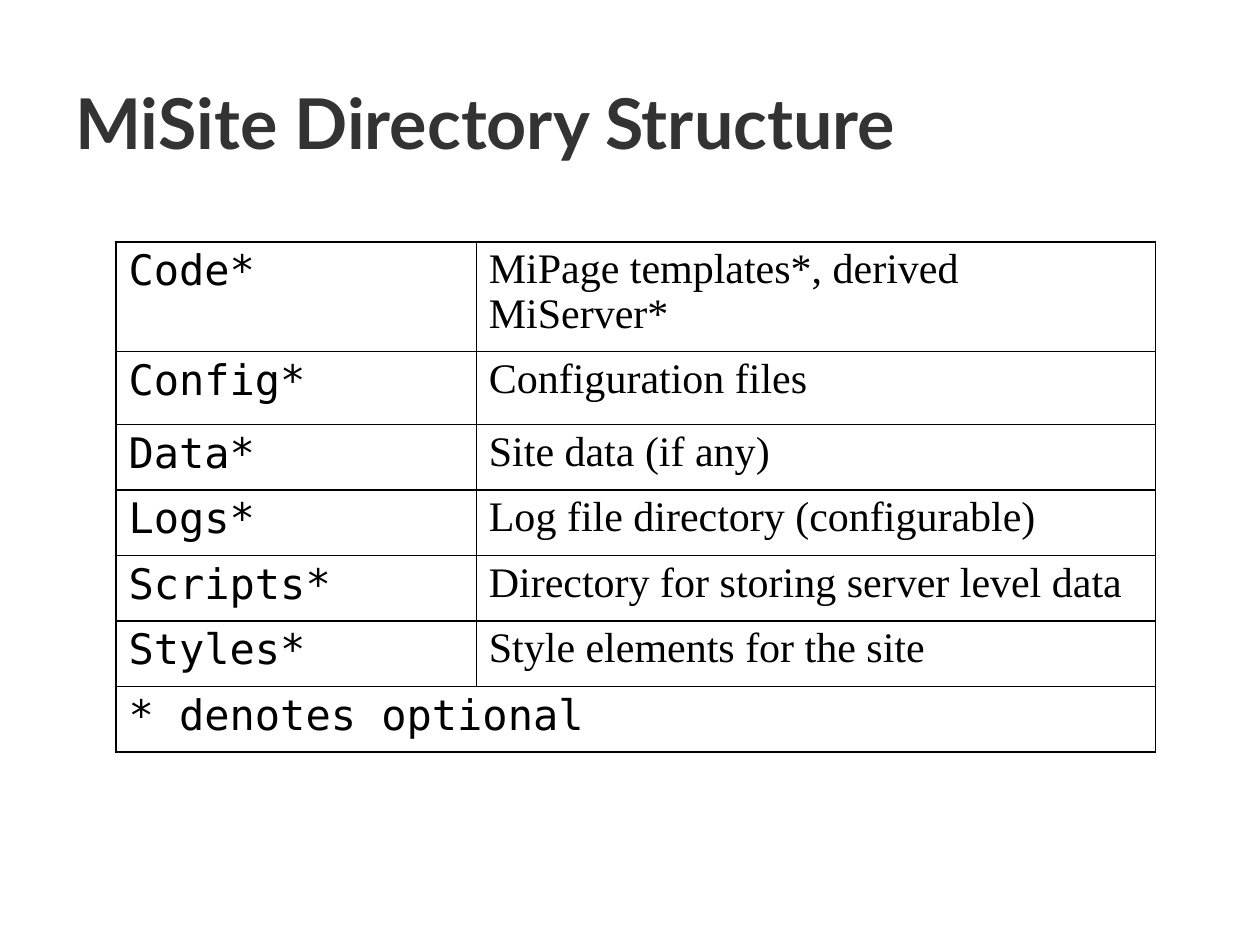
from dataclasses import dataclass

from lxml import etree
from pptx import Presentation
from pptx import util as u
from pptx.dml.color import RGBColor
from pptx.enum import text
from pptx.oxml.ns import qn


@dataclass(frozen=True)
class Theme:
    ink: str = "000000"
    heading: str = "333333"
    title_font: str = "Lato"
    code_font: str = "DejaVu Sans Mono"
    body_font: str = "Times New Roman"
    title_size: int = 40
    body_size: int = 24
    border: float = 1
    leading: float = 0.96


THEME = Theme()
WIDTH, HEIGHT = 10, 7.5
COLUMNS = (2.86, 5.39)
ROW_HEIGHTS = (0.58, 0.58) + (0.52,) * 5
DIRECTORIES = (
    ("Code*", "MiPage templates*, derived MiServer*"),
    ("Config*", "Configuration files"),
    ("Data*", "Site data (if any)"),
    ("Logs*", "Log file directory (configurable)"),
    ("Scripts*", "Directory for storing server level data"),
    ("Styles*", "Style elements for the site"),
)
FOOTNOTE = "* denotes optional"


def set_font(p, name, size, color, bold=False):
    p.font.name = name
    p.font.size = u.Pt(size)
    p.font.color.rgb = RGBColor.from_string(color)
    p.font.bold = bold


def add_title(s, wording):
    sp = s.shapes.add_textbox(u.Inches(0.05 * WIDTH), u.Inches(0.58),
                              u.Inches(0.9 * WIDTH), u.Inches(1))
    tf = sp.text_frame
    tf.word_wrap = True
    tf.vertical_anchor = text.MSO_ANCHOR.TOP
    p = tf.paragraphs[0]
    p.text = wording
    set_font(p, THEME.title_font, THEME.title_size, THEME.heading, bold=True)


def add_borders(cell):
    tc_pr = cell._tc.get_or_add_tcPr()
    for i, side in enumerate(("a:lnL", "a:lnR", "a:lnT", "a:lnB")):
        ln = etree.Element(qn(side), w=str(u.Pt(THEME.border)))
        fill = etree.SubElement(ln, qn("a:solidFill"))
        etree.SubElement(fill, qn("a:srgbClr"), val=THEME.ink)
        tc_pr.insert(i, ln)


def write_cell(cell, wording, font):
    p = cell.text_frame.paragraphs[0]
    p.text = wording
    p.line_spacing = THEME.leading
    set_font(p, font, THEME.body_size, THEME.ink)


def add_directory_table(s, left, top):
    frame = s.shapes.add_table(len(ROW_HEIGHTS), len(COLUMNS),
                               u.Inches(left), u.Inches(top),
                               u.Inches(sum(COLUMNS)), u.Inches(sum(ROW_HEIGHTS)))
    table = frame.table
    table.first_row = table.horz_banding = False
    for column, width in zip(table.columns, COLUMNS):
        column.width = u.Inches(width)
    for row, height in zip(table.rows, ROW_HEIGHTS):
        row.height = u.Inches(height)
    for cell in table.iter_cells():
        cell.fill.background()
        add_borders(cell)
    for i, (directory, purpose) in enumerate(DIRECTORIES):
        write_cell(table.cell(i, 0), directory, THEME.code_font)
        write_cell(table.cell(i, 1), purpose, THEME.body_font)
    last = len(DIRECTORIES)
    table.cell(last, 0).merge(table.cell(last, 1))
    write_cell(table.cell(last, 0), FOOTNOTE, THEME.code_font)


def main():
    prs = Presentation()
    prs.slide_width, prs.slide_height = u.Inches(WIDTH), u.Inches(HEIGHT)
    s = prs.slides.add_slide(prs.slide_layouts[6])
    add_title(s, "MiSite Directory Structure")
    add_directory_table(s, 0.92, 1.92)
    prs.save("out.pptx")


if __name__ == "__main__":
    main()
